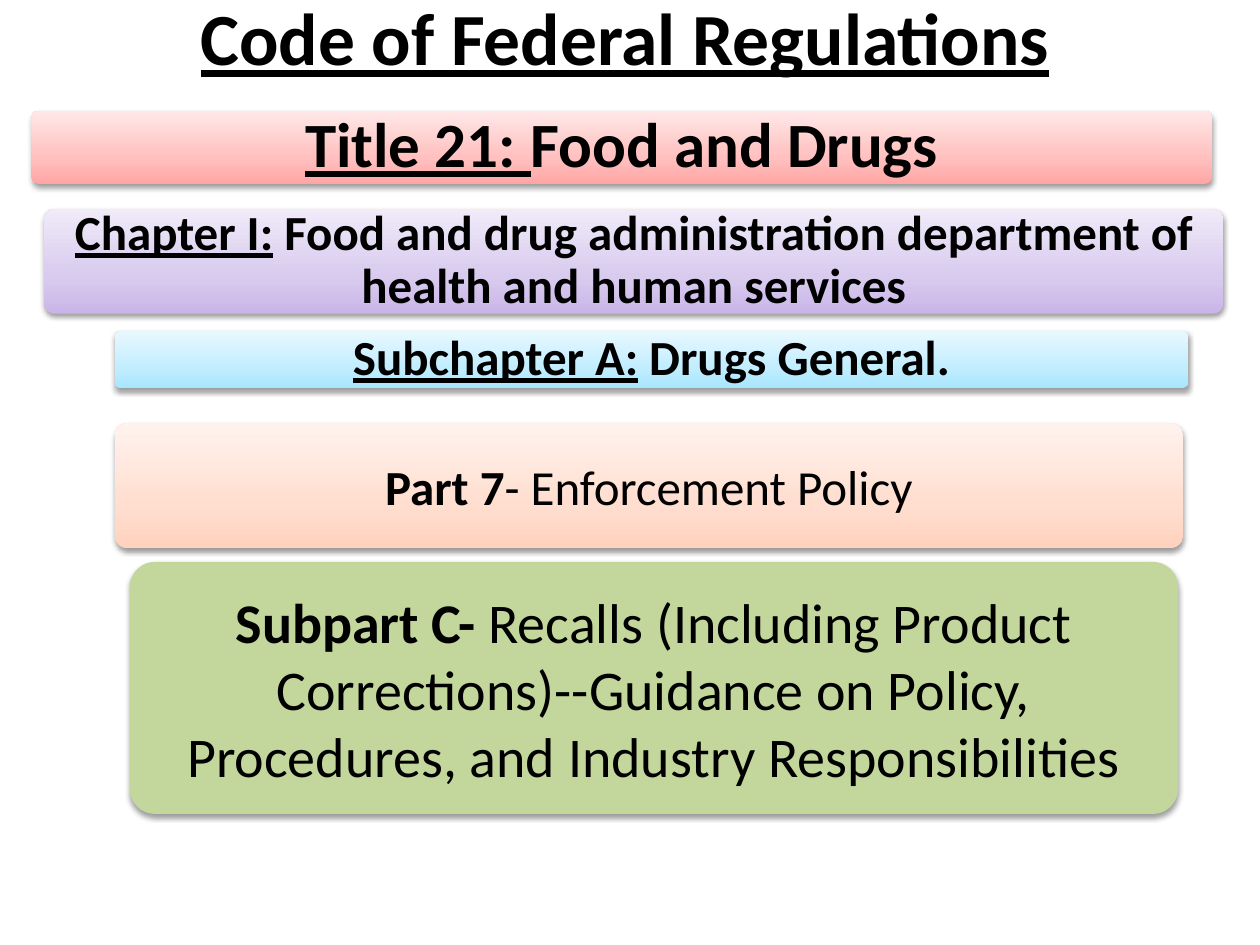
from copy import deepcopy
from dataclasses import dataclass

from lxml import etree
from pptx import Presentation
from pptx.dml.color import RGBColor
from pptx.enum.shapes import MSO_SHAPE
from pptx.enum.text import MSO_ANCHOR, PP_ALIGN
from pptx.oxml.ns import qn
from pptx.shapes.autoshape import Shape
from pptx.slide import Slide
from pptx.text.text import TextFrame
from pptx.util import Inches, Pt

ROUNDED = MSO_SHAPE.ROUNDED_RECTANGLE
MIDDLE = MSO_ANCHOR.MIDDLE
CENTER = PP_ALIGN.CENTER

FONT = "Calibri"
BLACK = RGBColor(0x00, 0x00, 0x00)
GREEN = (RGBColor(0xC3, 0xD6, 0x9B),)
# Gradients run from the bottom edge to the top edge
STOPS = (0, 0.35, 1)
RED = (RGBColor(0xFF, 0xA6, 0xA5), RGBColor(0xFF, 0xC0, 0xBF), RGBColor(0xFF, 0xE7, 0xE7))
PURPLE = (RGBColor(0xC9, 0xB5, 0xE8), RGBColor(0xD8, 0xCB, 0xEE), RGBColor(0xF0, 0xEA, 0xF9))
BLUE = (RGBColor(0xA7, 0xE6, 0xFF), RGBColor(0xC1, 0xED, 0xFF), RGBColor(0xE7, 0xF8, 0xFF))
ORANGE = (RGBColor(0xFF, 0xD2, 0xBD), RGBColor(0xFF, 0xDE, 0xD0), RGBColor(0xFF, 0xF2, 0xED))


@dataclass(frozen=True)
class Level:
    left: float
    top: float
    width: float
    height: float
    colors: tuple[RGBColor, ...]
    label: str
    subject: str
    size: int
    heading: bool = False  # underlined label, all bold, tight lines


LEVELS = (
    Level(0.25, 0.88, 9.37, 0.58, RED, "Title 21: ", "Food and Drugs", 36, True),
    Level(0.35, 1.66, 9.36, 0.83, PURPLE, "Chapter I:",
          " Food and drug administration department of health and human services", 28, True),
    Level(0.91, 2.63, 8.52, 0.45, BLUE, "Subchapter A:", " Drugs General.", 28, True),
    Level(0.91, 3.36, 8.48, 0.99, ORANGE, "Part 7", "- Enforcement Policy", 28),
    Level(1.03, 4.46, 8.32, 2, GREEN, "Subpart C- ",
          "Recalls (Including Product Corrections)--Guidance on Policy, "
          "Procedures, and Industry Responsibilities", 32),
)


def paint(shape: Shape, colors: tuple[RGBColor, ...]) -> None:
    """Fill with one solid colour or a three-stop vertical gradient."""
    if len(colors) == 1:
        shape.fill.solid()
        shape.fill.fore_color.rgb = colors[0]
        return
    shape.fill.gradient()
    shape.fill.gradient_angle = 90
    stop_list = shape._element.spPr.find(".//" + qn("a:gsLst"))
    stop_list.append(deepcopy(stop_list[-1]))
    for stop, position, color in zip(shape.fill.gradient_stops, STOPS, colors):
        stop.position = position
        stop.color.rgb = color


def add_shadow(shape: Shape) -> None:
    shape.shadow.inherit = False
    effects = shape._element.spPr.find(qn("a:effectLst"))
    shadow = etree.SubElement(
        effects, qn("a:outerShdw"), blurRad=str(Pt(3.1)), dist=str(Pt(1.6)),
        dir="5400000", rotWithShape="0")
    color = etree.SubElement(shadow, qn("a:srgbClr"), val="000000")
    etree.SubElement(color, qn("a:alpha"), val="38000")


def write(frame: TextFrame, parts: tuple[tuple[str, bool, bool], ...], size: int) -> None:
    """Write centred runs given as (text, bold, underlined)."""
    frame.word_wrap = True
    frame.vertical_anchor = MIDDLE
    paragraph = frame.paragraphs[0]
    paragraph.alignment = CENTER
    for text, bold, underlined in parts:
        run = paragraph.add_run()
        run.text = text
        run.font.name = FONT
        run.font.size = Pt(size)
        run.font.color.rgb = BLACK
        run.font.bold = bold
        run.font.underline = underlined


def add_level(slide: Slide, level: Level) -> None:
    bar = slide.shapes.add_shape(
        ROUNDED, Inches(level.left), Inches(level.top),
        Inches(level.width), Inches(level.height))
    bar.adjustments[0] = 0.1
    bar.line.fill.background()
    paint(bar, level.colors)
    add_shadow(bar)

    frame = bar.text_frame
    frame.margin_left = frame.margin_right = Inches(0.15)
    frame.margin_top = frame.margin_bottom = 0
    write(frame, ((level.label, True, level.heading),
                  (level.subject, level.heading, False)), level.size)
    if level.heading:
        frame.paragraphs[0].line_spacing = 0.9


def main() -> None:
    presentation = Presentation()
    presentation.slide_width = Inches(10)
    presentation.slide_height = Inches(7.5)
    slide = presentation.slides.add_slide(presentation.slide_layouts[6])

    # Heading
    heading = slide.shapes.add_textbox(Inches(0.5), Inches(0.08), Inches(8.92), Inches(0.42))
    write(heading.text_frame, (("Code of Federal Regulations", True, True),), 42)

    # Levels of the code, from broad to specific
    for level in LEVELS:
        add_level(slide, level)

    presentation.save("out.pptx")


if __name__ == "__main__":
    main()
